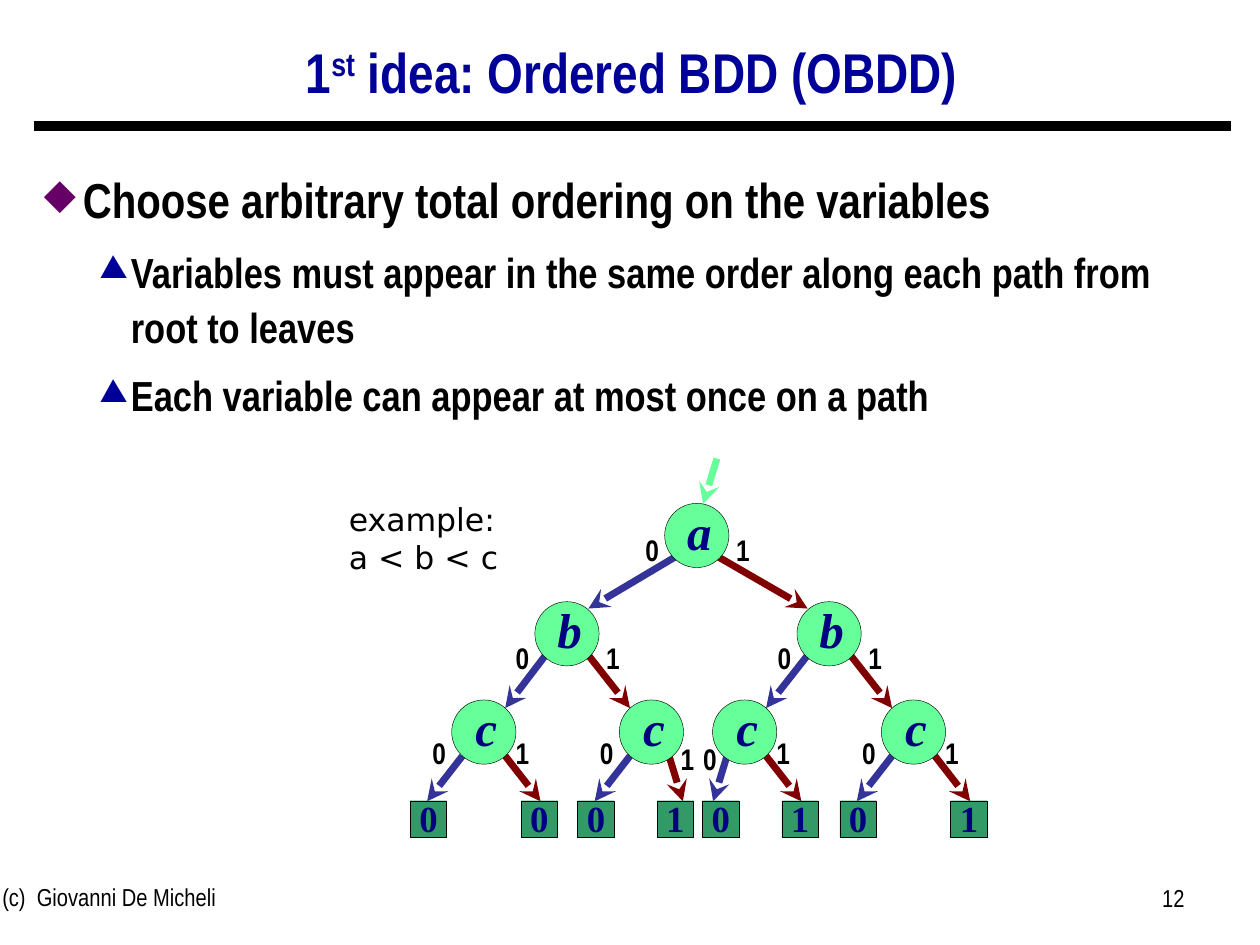
from dataclasses import dataclass

from lxml import etree
from pptx import Presentation
from pptx.dml.color import RGBColor
from pptx.enum.shapes import MSO_CONNECTOR, MSO_SHAPE
from pptx.enum.text import MSO_ANCHOR, PP_ALIGN
from pptx.oxml.ns import qn
from pptx.util import Inches, Pt

STRAIGHT = MSO_CONNECTOR.STRAIGHT
OVAL, RECTANGLE = MSO_SHAPE.OVAL, MSO_SHAPE.RECTANGLE
TOP, MIDDLE = MSO_ANCHOR.TOP, MSO_ANCHOR.MIDDLE
LEFT, CENTER, RIGHT = PP_ALIGN.LEFT, PP_ALIGN.CENTER, PP_ALIGN.RIGHT


@dataclass(frozen=True)
class Theme:
    ink: str = "000000"
    title: str = "000099"
    diamond: str = "660066"
    node: str = "66FF99"
    leaf: str = "339966"
    variable: str = "000080"
    low_edge: str = "333399"
    high_edge: str = "800000"
    sans: str = "Arial Narrow"
    serif: str = "Times New Roman"
    plain: str = "DejaVu Sans"
    title_size: int = 32
    body_size: int = 28
    sub_size: int = 24
    node_size: int = 28
    leaf_size: int = 21
    label_size: int = 17
    example_size: int = 18
    footer_size: int = 14


class SlideBuilder:
    def __init__(self, slide, theme):
        self.slide = slide
        self.theme = theme

    def format_runs(self, paragraph, size, font=None, color=None, bold=False, italic=False):
        for run in paragraph.runs:
            run.font.size = Pt(size)
            run.font.name = font or self.theme.sans
            run.font.color.rgb = RGBColor.from_string(color or self.theme.ink)
            run.font.bold = bold
            run.font.italic = italic

    def text_box(self, left, top, width, height, text, size, align=LEFT, anchor=TOP,
                 margins=(0.1, 0.05), wrap=True, **style):
        box = self.slide.shapes.add_textbox(
            Inches(left), Inches(top), Inches(width), Inches(height))
        frame = box.text_frame
        frame.word_wrap = wrap
        frame.vertical_anchor = anchor
        frame.margin_left = frame.margin_right = Inches(margins[0])
        frame.margin_top = frame.margin_bottom = Inches(margins[1])
        frame.text = text
        for paragraph in frame.paragraphs:
            paragraph.alignment = align
            self.format_runs(paragraph, size, **style)
        return frame

    def bullet(self, paragraph, symbol, color, scale, margin, hanging):
        properties = paragraph._p.get_or_add_pPr()
        properties.set("marL", str(Inches(margin)))
        properties.set("indent", str(-Inches(hanging)))
        bullet_color = etree.SubElement(properties, qn("a:buClr"))
        etree.SubElement(bullet_color, qn("a:srgbClr"), val=color)
        etree.SubElement(properties, qn("a:buSzPct"), val=str(scale * 1000))
        etree.SubElement(properties, qn("a:buChar"), char=symbol)

    def line(self, start, end, color, width, arrow=False):
        connector = self.slide.shapes.add_connector(
            STRAIGHT, *(Inches(value) for value in (*start, *end)))
        connector.line.color.rgb = RGBColor.from_string(color)
        connector.line.width = Pt(width)
        if arrow:
            etree.SubElement(connector.line._get_or_add_ln(), qn("a:tailEnd"), type="stealth")
        etree.SubElement(connector._element.spPr, qn("a:effectLst"))

    def vertex(self, kind, center, size, fill, text, text_size, nudge, italic):
        """Draw a tree vertex; nudge moves its text right and up from the centre."""
        shape = self.slide.shapes.add_shape(
            kind, Inches(center[0] - size / 2), Inches(center[1] - size / 2),
            Inches(size), Inches(size))
        shape.shadow.inherit = False
        shape.fill.solid()
        shape.fill.fore_color.rgb = RGBColor.from_string(fill)
        shape.line.color.rgb = RGBColor.from_string(self.theme.ink)
        shape.line.width = Pt(0.25)
        frame = shape.text_frame
        frame.word_wrap = False
        frame.vertical_anchor = MIDDLE
        frame.margin_right = frame.margin_top = 0
        frame.margin_left = Inches(2 * nudge[0])
        frame.margin_bottom = Inches(2 * nudge[1])
        frame.text = text
        paragraph = frame.paragraphs[0]
        paragraph.alignment = CENTER
        self.format_runs(paragraph, text_size, self.theme.serif, self.theme.variable, True, italic)

    def node(self, center, name):
        self.vertex(OVAL, center, 0.51, self.theme.node, name,
                    self.theme.node_size, (0.02, 0.04), True)

    def leaf(self, center, value):
        self.vertex(RECTANGLE, center, 0.29, self.theme.leaf, value,
                    self.theme.leaf_size, (0, 0.01), False)

    def branch(self, bit, start, end, label_x, label_top):
        color = self.theme.high_edge if bit else self.theme.low_edge
        self.line(start, end, color, 4, arrow=True)
        self.text_box(label_x - 0.05, label_top, 0.11, 0.28, str(bit), self.theme.label_size,
                      align=CENTER, margins=(0, 0), wrap=False, bold=True)


def add_heading(builder):
    theme = builder.theme
    builder.line((0.27, 1), (9.77, 1), theme.ink, 6)
    frame = builder.text_box(0.26, 0.22, 9.51, 0.75, "", theme.title_size, CENTER, MIDDLE)
    paragraph = frame.paragraphs[0]
    paragraph.line_spacing = 0.9
    for text in ("1", "st", " idea: Ordered BDD (OBDD)"):
        paragraph.add_run().text = text
    builder.format_runs(paragraph, theme.title_size, color=theme.title, bold=True)
    paragraph.runs[1].font._element.set("baseline", "30000")


def add_body(builder):
    theme = builder.theme
    text = "\n".join((
        "Choose arbitrary total ordering on the variables",
        "Variables must appear in the same order along each path from root to leaves",
        "Each variable can appear at most once on a path",
    ))
    frame = builder.text_box(0.25, 1.18, 9.51, 5.69, text, theme.sub_size, bold=True)
    main, *details = frame.paragraphs
    builder.format_runs(main, theme.body_size, bold=True)
    main.line_spacing = 1.25
    main.space_before = Pt(0.3 * theme.body_size)
    builder.bullet(main, "◆", theme.diamond, 85, 0.31, 0.31)
    for paragraph in details:
        paragraph.level = 1
        paragraph.line_spacing = 1.1
        paragraph.space_before = Pt(0.3 * theme.sub_size)
        builder.bullet(paragraph, "▲", theme.title, 75, 0.69, 0.25)


def add_tree(builder):
    root_x, b_columns, c_columns = 5.53, (4.5, 6.58), (3.84, 5.17, 5.91, 7.25)
    a_row, b_row, c_row, leaf_row = 4.25, 5.03, 5.81, 6.5
    leaf_values = ("00", "01", "01", "01")
    sides = ((0, -1), (1, 1))

    builder.line((5.69, 3.64), (5.58, 4), builder.theme.node, 4, arrow=True)
    for bit, side in sides:
        builder.branch(bit, (root_x + 0.17 * side, a_row + 0.17),
                       (b_columns[bit] - 0.17 * side, b_row - 0.2),
                       root_x + 0.36 * side, a_row - 0.03)
    for index, b_x in enumerate(b_columns):
        for bit, side in sides:
            child_x = c_columns[2 * index + bit]
            builder.branch(bit, (b_x + 0.17 * side, b_row + 0.17),
                           (child_x - 0.17 * side, c_row - 0.19),
                           b_x + 0.36 * side, b_row + 0.05)
    for index, c_x in enumerate(c_columns):
        for bit, side in sides:
            # The two middle subtrees stand close, so their facing branches are steeper.
            facing = (index, bit) in ((1, 1), (2, 0))
            start, end, leaf = (0.14, 0.25, 0.19) if facing else (0.17, 0.45, 0.44)
            label = 0.28 if facing else (0.36, 0.3)[bit]
            builder.branch(bit, (c_x + start * side, c_row + 0.19),
                           (c_x + end * side, leaf_row - 0.14),
                           c_x + label * side, c_row + (0.07 if facing else 0.02))
            builder.leaf((c_x + leaf * side, leaf_row), leaf_values[index][bit])

    for name, row, columns in (("a", a_row, (root_x,)), ("b", b_row, b_columns),
                               ("c", c_row, c_columns)):
        for x in columns:
            builder.node((x, row), name)


def main():
    presentation = Presentation()
    presentation.slide_width, presentation.slide_height = Inches(10), Inches(7.5)
    slide = presentation.slides.add_slide(presentation.slide_layouts[6])
    theme = Theme()
    builder = SlideBuilder(slide, theme)
    add_heading(builder)
    add_body(builder)
    add_tree(builder)
    builder.text_box(2.67, 3.92, 1.49, 0.7, "example:\na < b < c",
                     theme.example_size, font=theme.plain)
    footer = builder.text_box(-0.08, 6.95, 3.17, 0.52, "(c)\u00a0 Giovanni De Micheli".replace("\u00a0", " "),
                              theme.footer_size)
    footer.word_wrap = True
    builder.text_box(7.17, 6.96, 2.33, 0.52, "12", theme.footer_size, RIGHT)
    presentation.save("out.pptx")


if __name__ == "__main__":
    main()
